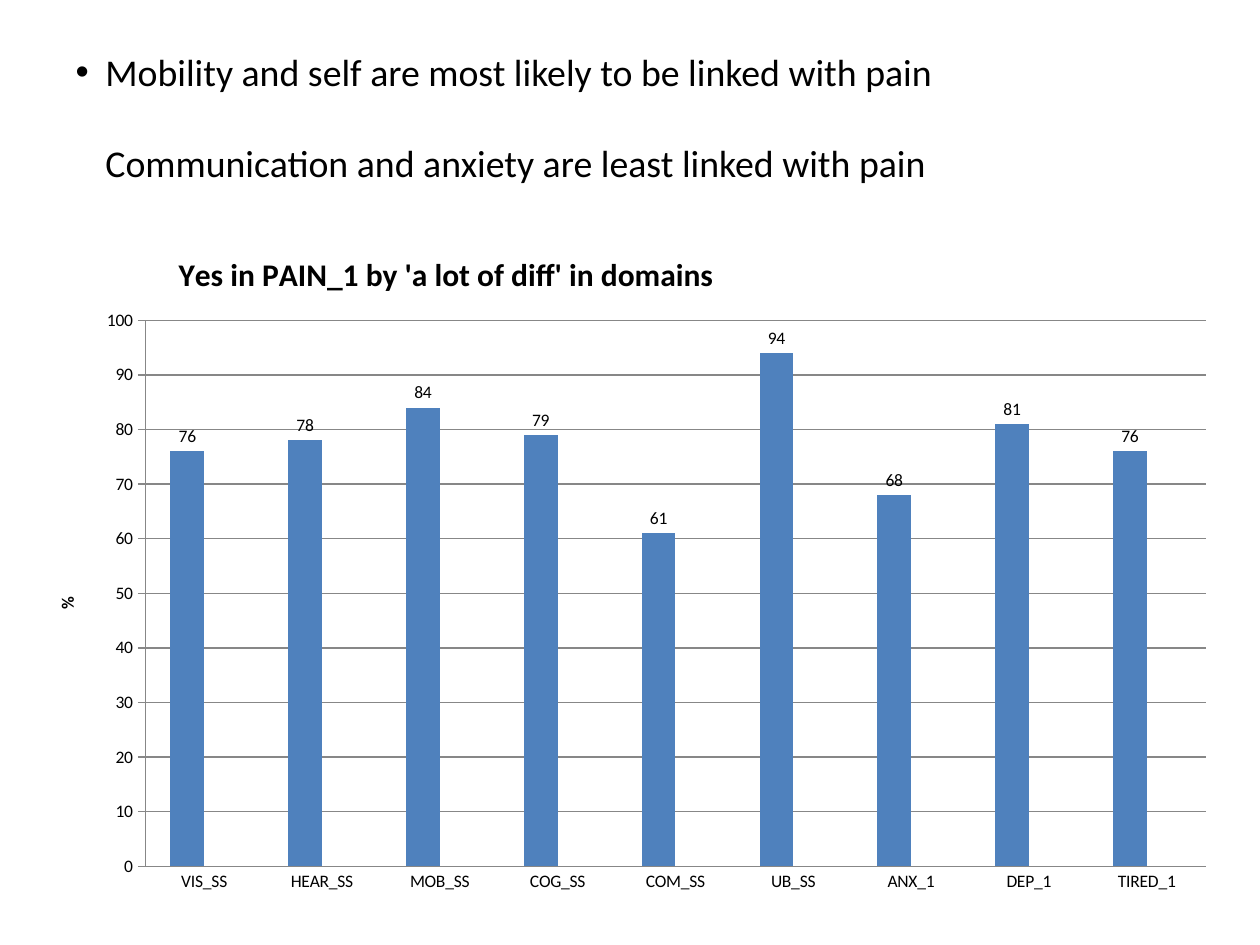
from lxml.etree import SubElement
from pptx import Presentation
from pptx.chart.data import CategoryChartData
from pptx.dml.color import RGBColor
from pptx.enum.chart import XL_CHART_TYPE as ChartType
from pptx.enum.chart import XL_LABEL_POSITION as LabelPosition
from pptx.enum.chart import XL_TICK_MARK as TickMark
from pptx.enum.text import MSO_ANCHOR, MSO_AUTO_SIZE, PP_ALIGN
from pptx.oxml.ns import qn
from pptx.util import Cm, Pt

# Content
FINDINGS = [
    "Mobility and self are most likely to be linked with pain",
    "Communication and anxiety are least linked with pain",
]
CHART_TITLE = "Yes in PAIN_1 by 'a lot of diff' in domains"
AXIS_TITLE = "%"
PAIN_BY_DOMAIN = {
    "VIS_SS": 76, "HEAR_SS": 78, "MOB_SS": 84, "COG_SS": 79, "COM_SS": 61,
    "UB_SS": 94, "ANX_1": 68, "DEP_1": 81, "TIRED_1": 76,
}

# Style
FONT = "Calibri"
BLACK = RGBColor(0x00, 0x00, 0x00)
GRAY = RGBColor(0x87, 0x87, 0x87)
BLUE = RGBColor(0x4F, 0x81, 0xBD)
RED = RGBColor(0xC0, 0x50, 0x4D)


def style_font(font, size, bold=False):
    font.name, font.size, font.bold = FONT, Pt(size), bold
    font.color.rgb = BLACK


def place(element, position, **fractions):
    """Set a manual layout, in fractions of the chart, on a chart part."""
    layout = element.find(qn("c:layout"))
    if layout is None:
        layout = element.makeelement(qn("c:layout"))
        element.insert(position, layout)
    manual = SubElement(layout, qn("c:manualLayout"))
    if "w" in fractions:
        SubElement(manual, qn("c:layoutTarget")).set("val", "inner")
    for mode in ("xMode", "yMode"):
        SubElement(manual, qn(f"c:{mode}")).set("val", "edge")
    for key, fraction in fractions.items():
        SubElement(manual, qn(f"c:{key}")).set("val", str(fraction))


def add_findings(title):
    title.left, title.top = Cm(1.27), Cm(0.76)
    title.width, title.height = Cm(22.86), Cm(3.18)
    frame = title.text_frame
    frame.text = "\n".join(FINDINGS)
    frame.word_wrap = True
    frame.auto_size = MSO_AUTO_SIZE.NONE
    frame.vertical_anchor = MSO_ANCHOR.MIDDLE
    for index, finding in enumerate(frame.paragraphs):
        properties = finding._p.get_or_add_pPr()
        properties.set("marL", str(Cm(0.6)))
        if index == 0:
            properties.set("indent", str(-Cm(0.6)))
            SubElement(properties, qn("a:buFont")).set("typeface", "Arial")
            SubElement(properties, qn("a:buChar")).set("char", "•")
        else:
            properties.set("indent", "0")
            SubElement(properties, qn("a:buNone"))
            finding.space_before = Pt(26)
        finding.alignment = PP_ALIGN.LEFT
        style_font(finding.font, 21.6)


def add_pain_chart(slide):
    data = CategoryChartData()
    data.categories = list(PAIN_BY_DOMAIN)
    data.add_series("Series 1", list(PAIN_BY_DOMAIN.values()))
    data.add_series("Series 2", [None] * len(PAIN_BY_DOMAIN))
    chart = slide.shapes.add_chart(
        ChartType.COLUMN_CLUSTERED,
        Cm(0.58), Cm(4.57), Cm(24.21), Cm(13.69), data).chart
    style_font(chart.font, 10)
    chart.has_legend = False

    # Columns and their labels
    plot = chart.plots[0]
    plot.vary_by_categories = False
    plot.gap_width, plot.overlap = 150, 0
    for series, color in zip(plot.series, (BLUE, RED)):
        series.format.fill.solid()
        series.format.fill.fore_color.rgb = color
    labels = plot.series[0].data_labels
    labels.show_value = True
    labels.position = LabelPosition.OUTSIDE_END
    style_font(labels.font, 10)

    # Axes
    domains, percent = chart.category_axis, chart.value_axis
    domains.major_tick_mark = TickMark.NONE
    percent.major_tick_mark = TickMark.CROSS
    percent.minimum_scale, percent.maximum_scale = 0, 100
    percent.major_unit = 10
    percent.has_major_gridlines = True
    for line in (domains.format.line, percent.format.line,
                 percent.major_gridlines.format.line):
        line.color.rgb = GRAY
        line.width = Pt(0.75)

    # Titles and plot area
    chart.has_title = percent.has_title = True
    for title, text, size, x, y in (
            (chart.chart_title, CHART_TITLE, 18, 0.12, 0.03),
            (percent.axis_title, AXIS_TITLE, 10, 0.02, 0.54)):
        title.text_frame.text = text
        style_font(title.text_frame.paragraphs[0].font, size, bold=True)
        place(title._element, 1, x=x, y=y)
    plot_area = chart._chartSpace.chart.plotArea
    place(plot_area, 0, x=0.097, y=0.138, w=0.883, h=0.804)


def main():
    deck = Presentation()
    deck.slide_width, deck.slide_height = Cm(25.4), Cm(19.05)
    slide = deck.slides.add_slide(deck.slide_layouts[5])
    add_findings(slide.shapes.title)
    add_pain_chart(slide)
    deck.save("out.pptx")


if __name__ == "__main__":
    main()
